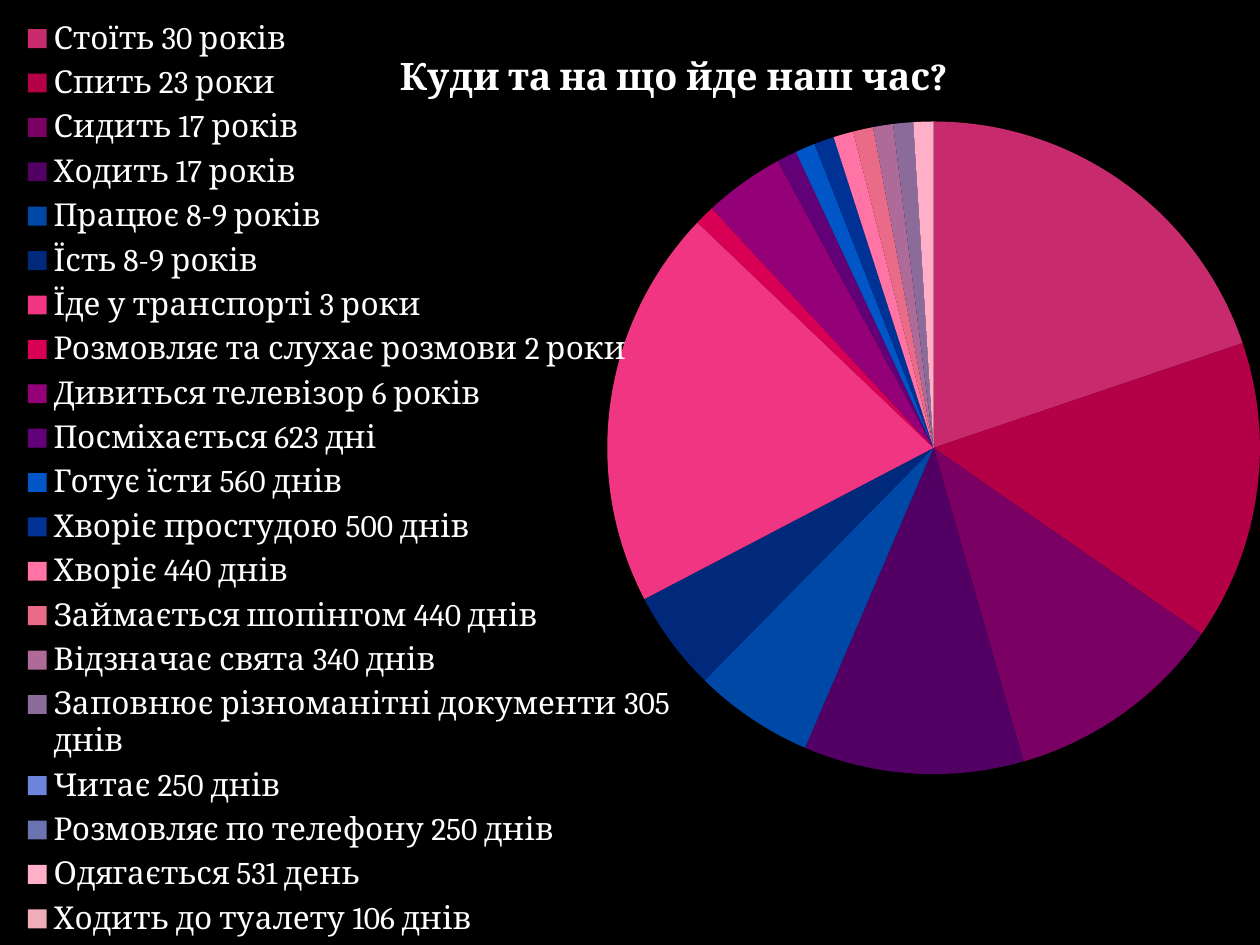
from pptx import Presentation
from pptx.chart.data import CategoryChartData
from pptx.dml.color import RGBColor
from pptx.enum.chart import XL_CHART_TYPE, XL_LEGEND_POSITION
from pptx.oxml import parse_xml
from pptx.oxml.ns import nsdecls
from pptx.util import Inches, Pt

WIDE, HIGH = 10, 7.5
FONT = "Cambria"
TITLE = "Куди та на що йде наш час?"
BLACK = RGBColor(0x00, 0x00, 0x00)
WHITE = RGBColor(0xFF, 0xFF, 0xFF)

SLICES = [
    ("Стоїть 30 років", 20, RGBColor(0xC8, 0x2B, 0x6D)),
    ("Спить 23 роки", 15, RGBColor(0xB3, 0x00, 0x46)),
    ("Сидить 17 років", 11, RGBColor(0x7B, 0x00, 0x64)),
    ("Ходить 17 років", 11, RGBColor(0x52, 0x00, 0x64)),
    ("Працює 8-9 років", 6, RGBColor(0x00, 0x48, 0xA6)),
    ("Їсть 8-9 років", 5, RGBColor(0x00, 0x29, 0x7C)),
    ("Їде у транспорті 3 роки", 20, RGBColor(0xF0, 0x35, 0x83)),
    ("Розмовляє та слухає розмови 2 роки", 1, RGBColor(0xD7, 0x00, 0x54)),
    ("Дивиться телевізор 6 років", 4, RGBColor(0x93, 0x00, 0x78)),
    ("Посміхається 623 дні", 1, RGBColor(0x62, 0x00, 0x78)),
    ("Готує їсти 560 днів", 1, RGBColor(0x00, 0x56, 0xC7)),
    ("Хворіє простудою 500 днів", 1, RGBColor(0x00, 0x31, 0x95)),
    ("Хворіє 440 днів", 1, RGBColor(0xFF, 0x73, 0xA5)),
    ("Займається шопінгом 440 днів", 1, RGBColor(0xE9, 0x6B, 0x87)),
    ("Відзначає свята 340 днів", 1, RGBColor(0xAE, 0x6B, 0x9A)),
    ("Заповнює різноманітні документи 305 днів", 1, RGBColor(0x8B, 0x6B, 0x9A)),
    ("Читає 250 днів", 0, RGBColor(0x6B, 0x85, 0xDC)),
    ("Розмовляє по телефону 250 днів", 0, RGBColor(0x6B, 0x74, 0xB0)),
    ("Одягається 531 день", 1, RGBColor(0xFF, 0xAF, 0xC8)),
    ("Ходить до туалету 106 днів", 0, RGBColor(0xF0, 0xAD, 0xB8)),
]


def style(font, size, bold=False, color=WHITE):
    font.name = FONT
    font.size = Pt(size)
    font.bold = bold
    font.color.rgb = color


def write(frame, text, **form):
    frame.text = text
    style(frame.paragraphs[0].runs[0].font, **form)


def place(node, x, y, w=None, h=None, inner=False):
    for old in node.xpath("./c:layout"):
        node.remove(old)
    tags = [("layoutTarget", "inner")] if inner else []
    tags += [("xMode", "edge"), ("yMode", "edge"), ("x", x / WIDE), ("y", y / HIGH)]
    if w is not None:
        tags += [("w", w / WIDE), ("h", h / HIGH)]
    body = "".join(f'<c:{tag} val="{val}"/>' for tag, val in tags)
    layout = parse_xml(
        f'<c:layout {nsdecls("c")}><c:manualLayout>{body}</c:manualLayout></c:layout>'
    )
    over = node.xpath("./c:overlay")
    if over:
        over[0].addprevious(layout)
    else:
        node.insert(0, layout)


def add_pie(slide, left, top, width, height):
    data = CategoryChartData()
    data.categories = [name for name, _, _ in SLICES]
    data.add_series(TITLE, [value for _, value, _ in SLICES])
    chart = slide.shapes.add_chart(
        XL_CHART_TYPE.PIE, left, top, width, height, data
    ).chart
    style(chart.font, 18)
    chart.has_title = True
    write(chart.chart_title.text_frame, TITLE, size=21.6, bold=True)
    chart.has_legend = True
    chart.legend.position = XL_LEGEND_POSITION.RIGHT
    chart.legend.include_in_layout = False
    style(chart.legend.font, 18)

    plot = chart.plots[0]
    plot.vary_by_categories = True
    for index, (_, _, color) in enumerate(SLICES):
        form = plot.series[0].points[index].format
        form.fill.solid()
        form.fill.fore_color.rgb = color
        form.line.fill.background()

    root = chart.element
    place(root.xpath("./c:chart/c:title")[0], 3.12, 0.36)
    place(root.xpath("./c:chart/c:legend")[0], 0.17, 0.1, 5.2, 7.4)
    place(root.xpath("./c:chart/c:plotArea")[0], 4.82, 0.77, 5.18, 5.57, inner=True)


def main():
    deck = Presentation()
    deck.slide_width, deck.slide_height = Inches(WIDE), Inches(HIGH)
    slide = deck.slides.add_slide(deck.slide_layouts[6])
    fill = slide.background.fill
    fill.solid()
    fill.fore_color.rgb = BLACK
    add_pie(slide, 0, 0, deck.slide_width, deck.slide_height)
    deck.save("out.pptx")


if __name__ == "__main__":
    main()
